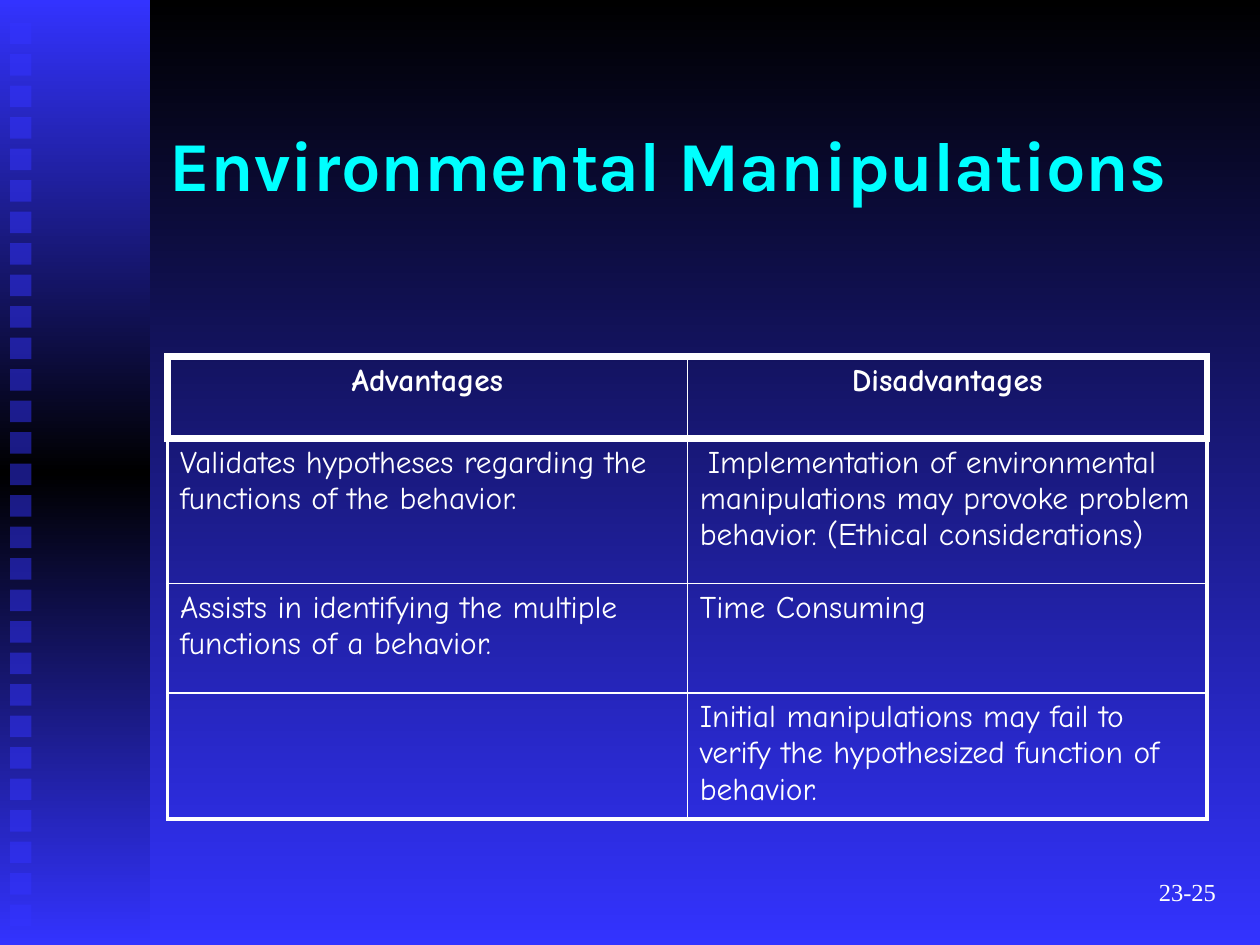
"""Build the Environmental Manipulations slide."""
from dataclasses import dataclass

from lxml.etree import SubElement
from pptx import Presentation
from pptx.dml.color import RGBColor
from pptx.enum.shapes import MSO_SHAPE
from pptx.enum.text import MSO_ANCHOR, PP_ALIGN
from pptx.oxml import parse_xml
from pptx.oxml.ns import nsdecls, qn
from pptx.util import Inches, Pt

COLORS = {"blue": "3333FF", "black": "000000", "cyan": "00FFFF", "white": "FFFFFF"}
BODY_FONT, TITLE_FONT, NUMBER_FONT = "Comic Neue", "Karla", "Times New Roman"
ROW_HEIGHTS = (0.65, 1.15, 0.87, 0.54)
COLUMN_WIDTH = 4.125
ROWS = (
    ("Advantages", "Disadvantages"),
    ("Validates hypotheses regarding the functions of the behavior.",
     "Implementation of environmental manipulations may provoke problem behavior. "
     "(Ethical considerations)"),
    ("Assists in identifying the multiple functions of a behavior.", "Time Consuming"),
    ("", "Initial manipulations may fail to verify the hypothesized function of behavior."),
)


@dataclass
class Box:
    """Position and size in inches."""
    x: float
    y: float
    w: float
    h: float

    def emu(self) -> tuple:
        """Return the four lengths for a shape call."""
        return tuple(Inches(v) for v in (self.x, self.y, self.w, self.h))


def set_gradient(fill, element, names: tuple) -> None:
    """Fill downwards with evenly spaced colours."""
    fill.gradient()
    fill.gradient_angle = 270
    stops = next(element.iter(qn("a:gsLst")))
    for gs in list(stops):
        stops.remove(gs)
    for i, name in enumerate(names):
        gs = SubElement(stops, qn("a:gs"), pos=str(100000 * i // (len(names) - 1)))
        SubElement(gs, qn("a:srgbClr"), val=COLORS[name])


def add_rect(s, box: Box):
    """Add a rectangle without line or shadow."""
    sp = s.shapes.add_shape(MSO_SHAPE.RECTANGLE, *box.emu())
    sp.shadow.inherit = False
    sp.line.fill.background()
    return sp


def add_square(s, box: Box) -> None:
    """Add a half-transparent square."""
    sp = add_rect(s, box)
    sp.fill.solid()
    sp.fill.fore_color.rgb = RGBColor.from_string(COLORS["blue"])
    color = next(sp._element.spPr.iter(qn("a:srgbClr")))
    SubElement(color, qn("a:alpha"), val="50000")


def add_run(p, text: str, *, font: str = BODY_FONT, size: float = 18,
            color: str = "white", bold: bool = False) -> None:
    """Append a formatted run to a paragraph."""
    r = p.add_run()
    r.text = text
    r.font.name = font
    r.font.size = Pt(size)
    r.font.bold = bold
    r.font.color.rgb = RGBColor.from_string(COLORS[color])


def add_label(s, box: Box, text: str, align=PP_ALIGN.LEFT, **style) -> None:
    """Add a vertically centred text box."""
    tf = s.shapes.add_textbox(*box.emu()).text_frame
    tf.word_wrap = True
    tf.vertical_anchor = MSO_ANCHOR.MIDDLE
    p = tf.paragraphs[0]
    p.alignment = align
    add_run(p, text, **style)


def set_borders(cell, widths: dict) -> None:
    """Draw white cell borders with widths in points."""
    tc_pr = cell._tc.get_or_add_tcPr()
    for i, side in enumerate("LRTB"):
        tc_pr.insert(i, parse_xml(
            f'<a:ln{side} {nsdecls("a")} w="{int(Pt(widths[side]))}"><a:solidFill>'
            f'<a:srgbClr val="{COLORS["white"]}"/></a:solidFill></a:ln{side}>'))


def fill_cell(cell, row: int, col: int, text: str) -> None:
    """Write one table cell with its borders."""
    header, last = row == 0, row == len(ROWS) - 1
    outer = 4.5 if header else 2.25
    cell.fill.background()
    set_borders(cell, {
        "L": outer if col == 0 else 1,
        "R": outer if col == 1 else 1,
        "T": 4.5 if row <= 1 else 1,
        "B": outer if header or last else 1,
    })
    if not text:
        return
    p = cell.text_frame.paragraphs[0]
    p.alignment = PP_ALIGN.CENTER if header else PP_ALIGN.LEFT
    before = SubElement(p._p.get_or_add_pPr(), qn("a:spcBef"))
    SubElement(before, qn("a:spcPct"), val="20000")
    if (row, col) == (1, 1):
        add_run(p, " ", font=NUMBER_FONT)
    add_run(p, text, bold=header)


def add_comparison(s, box: Box) -> None:
    """Add the table of advantages and disadvantages."""
    table = s.shapes.add_table(len(ROWS), 2, *box.emu()).table
    table.first_row = table.horz_banding = False
    for column in table.columns:
        column.width = Inches(COLUMN_WIDTH)
    for i, texts in enumerate(ROWS):
        table.rows[i].height = Inches(ROW_HEIGHTS[i])
        for j, text in enumerate(texts):
            fill_cell(table.cell(i, j), i, j, text)


def main() -> None:
    """Build and save the slide."""
    prs = Presentation()
    prs.slide_width, prs.slide_height = Inches(10), Inches(7.5)
    s = prs.slides.add_slide(prs.slide_layouts[6])
    set_gradient(s.background.fill, s._element, ("black", "blue"))
    band = add_rect(s, Box(0, 0, 1.19, 7.5))
    set_gradient(band.fill, band._element, ("blue", "black", "blue"))
    for i in range(29):
        add_square(s, Box(0.08, 0.18 + 0.25 * i, 0.17, 0.17))
    add_label(s, Box(1.25, 0.67, 8.5, 1.25), "Environmental Manipulations",
              font=TITLE_FONT, size=40, color="cyan", bold=True)
    add_comparison(s, Box(1.33, 2.83, 2 * COLUMN_WIDTH, sum(ROW_HEIGHTS)))
    add_label(s, Box(7.67, 6.83, 2.08, 0.5), "23-25", PP_ALIGN.RIGHT,
              font=NUMBER_FONT, size=14)
    prs.save("out.pptx")


if __name__ == "__main__":
    main()
